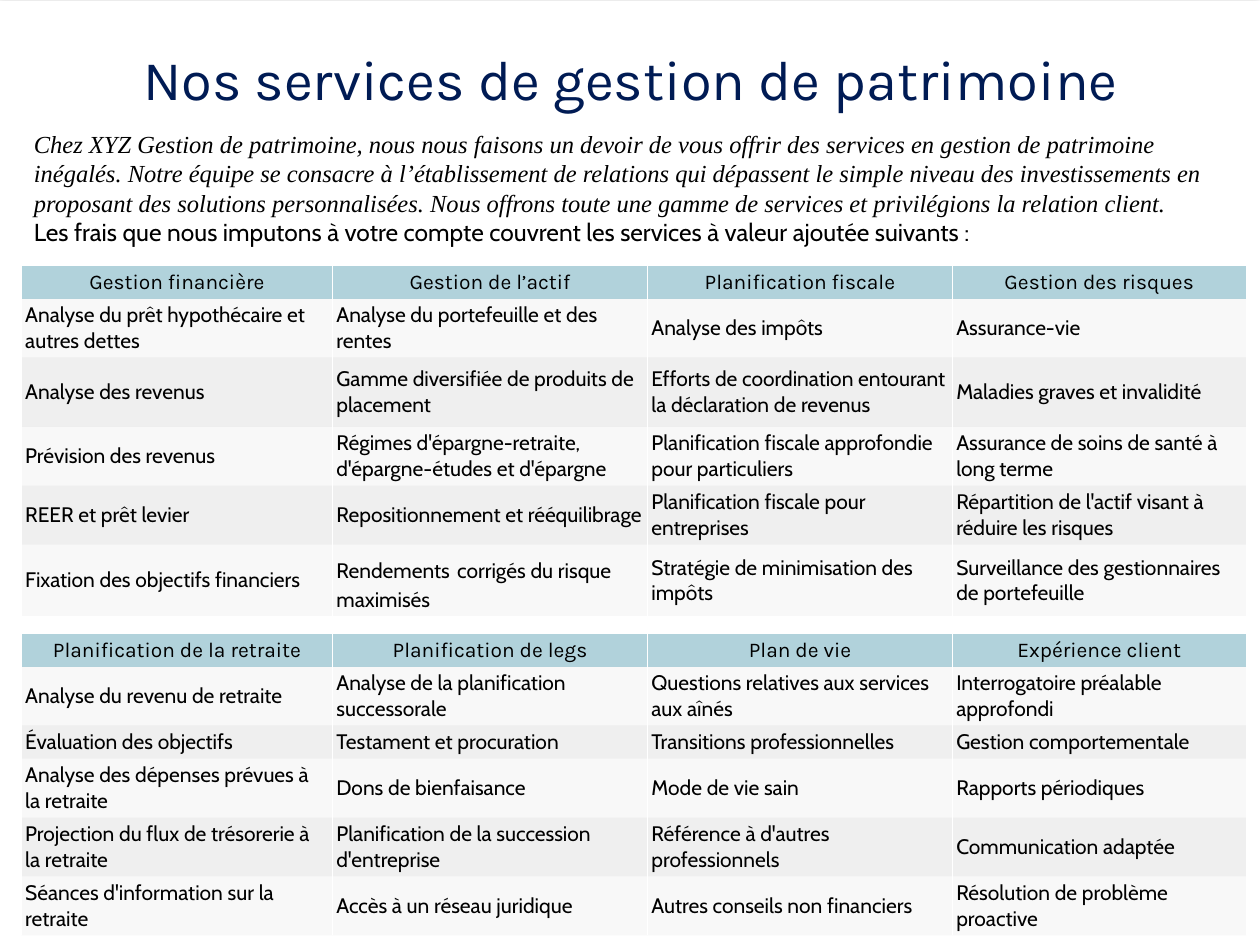
"""Build the wealth-management services slide with its two-part service table."""
from lxml import etree
from pptx import Presentation
from pptx import util as u
from pptx.dml.color import RGBColor
from pptx.enum import shapes, text
from pptx.oxml import ns, parse_xml

COLORS = {"white": "FFFFFF", "black": "000000", "navy": "001B54", "header": "B1D2DB", "band": "C0C0C0"}
NS = ns.nsdecls("a")

prs = Presentation()
prs.slide_width, prs.slide_height = u.Inches(10), u.Inches(7.5)
COL, ROW = prs.slide_width / 100, prs.slide_height / 75
s = prs.slides.add_slide(prs.slide_layouts[6])


def box(left, top, width, height):
    return int(left * COL), int(top * ROW), int(width * COL), int(height * ROW)


def add_run(p, content, font, size, color="black", italic=False):
    r = p.add_run()
    r.text = content
    r.font.name, r.font.size, r.font.italic = font, u.Pt(size), italic
    r.font.color.rgb = RGBColor.from_string(COLORS[color])


sp = s.shapes.add_shape(shapes.MSO_SHAPE.RECTANGLE, *box(0, 0.1, 100, 75.8))
sp.fill.solid()
sp.fill.fore_color.rgb = RGBColor.from_string(COLORS["white"])
sp.line.fill.background()
sp._element.spPr.append(parse_xml(
    f'<a:effectLst {NS}><a:outerShdw blurRad="{u.Pt(3.1)}" dist="{u.Pt(1.8)}" dir="5400000" rotWithShape="0">'
    f'<a:srgbClr val="{COLORS["black"]}"><a:alpha val="35000"/></a:srgbClr></a:outerShdw></a:effectLst>'))

SECTIONS = [
    [
        ["Gestion financière", "Gestion de l’actif", "Planification fiscale", "Gestion des risques"],
        ["Analyse du prêt hypothécaire et autres dettes", "Analyse du portefeuille et des rentes",
         "Analyse des impôts", "Assurance-vie"],
        ["Analyse des revenus", "Gamme diversifiée de produits de placement",
         "Efforts de coordination entourant la déclaration de revenus", "Maladies graves et invalidité"],
        ["Prévision des revenus", "Régimes d'épargne-retraite, d'épargne-études et d'épargne",
         "Planification fiscale approfondie pour particuliers", "Assurance de soins de santé à long terme"],
        ["REER et prêt levier", "Repositionnement et rééquilibrage",
         "Planification fiscale pour entreprises", "Répartition de l'actif visant à réduire les risques"],
        ["Fixation des objectifs financiers", "Rendements| |corrigés du risque maximisés",
         "Stratégie de minimisation des impôts", "Surveillance des gestionnaires de portefeuille"],
    ],
    [
        ["Planification de la retraite", "Planification de legs", "Plan de vie", "Expérience client"],
        ["Analyse du revenu de retraite", "Analyse de la planification successorale",
         "Questions relatives aux services aux aînés", "Interrogatoire préalable approfondi"],
        ["Évaluation des objectifs", "Testament et procuration",
         "Transitions professionnelles", "Gestion comportementale"],
        ["Analyse des dépenses prévues à la retraite", "Dons de bienfaisance",
         "Mode de vie sain", "Rapports périodiques"],
        ["Projection du flux de trésorerie à la retraite", "Planification de la succession d'entreprise",
         "Référence à d'autres professionnels", "Communication adaptée"],
        ["Séances d'information sur la retraite", "Accès à un réseau juridique",
         "Autres conseils non financiers", "Résolution de problème proactive"],
    ],
]
GAP = [[""] * 4]
rows = SECTIONS[0] + GAP + SECTIONS[1]
kinds = ["header", "light", "dark", "light", "dark", "light"]
kinds = kinds + ["gap"] + kinds
FILLS = {"header": ("header", 100), "light": ("band", 10), "dark": ("band", 25), "gap": ("white", 100)}
WIDTHS = [24.7, 25, 24.2, 23.3]
HEIGHTS = [2.6, 4.5, 5.5, 4.5, 4.5, 5.5, 1.4, 2.6, 4.5, 2.6, 4.5, 4.5, 4.5]

frame = s.shapes.add_table(len(rows), len(WIDTHS), *box(1.7, 21.1, sum(WIDTHS), sum(HEIGHTS)))
tbl = frame.table
tbl.first_row = tbl.horz_banding = False
tbl._tbl.tblPr.find(ns.qn("a:tableStyleId")).text = "{2D5ABB26-0587-4C30-8999-92F81FD0307C}"
for column, width in zip(tbl.columns, WIDTHS):
    column.width = int(width * COL)
for line, height in zip(tbl.rows, HEIGHTS):
    line.height = int(height * ROW)

for i, (labels, kind) in enumerate(zip(rows, kinds)):
    fill, alpha = FILLS[kind]
    for j, label in enumerate(labels):
        cell = tbl.cell(i, j)
        inset = 0 if kind == "gap" else u.Inches(0.03)
        cell.margin_left = cell.margin_right = cell.margin_top = cell.margin_bottom = inset
        cell.vertical_anchor = text.MSO_ANCHOR.MIDDLE
        cell.fill.solid()
        cell.fill.fore_color.rgb = RGBColor.from_string(COLORS[fill])
        tcPr = cell._tc.get_or_add_tcPr()
        if alpha < 100:
            etree.SubElement(tcPr.find(".//" + ns.qn("a:srgbClr")), ns.qn("a:alpha"), val=str(alpha * 1000))
        for k, side in enumerate(["lnL", "lnR"]):
            tcPr.insert(k, parse_xml(
                f'<a:{side} {NS} w="{u.Pt(0.25)}"><a:solidFill>'
                f'<a:srgbClr val="{COLORS["white"]}"/></a:solidFill></a:{side}>'))
        p = cell.text_frame.paragraphs[0]
        if kind == "gap":
            etree.SubElement(p._p, ns.qn("a:endParaRPr"), sz="600")
            continue
        if kind == "header":
            p.alignment = text.PP_ALIGN.CENTER
        for part in label.split("|"):
            if part == " ":
                add_run(p, part, "Calibri", 18)
            else:
                add_run(p, part, "Karla" if kind == "header" else "Cabin", 12)

INTRO = ("Chez XYZ Gestion de patrimoine, nous nous faisons un devoir de vous offrir des services en gestion de "
         "patrimoine inégalés. Notre équipe se consacre à l’établissement de relations qui dépassent le simple "
         "niveau des investissements en proposant des solutions personnalisées. Nous offrons toute une gamme de "
         "services et privilégions la relation client.")
FEES = "Les frais que nous imputons à votre compte couvrent les services à valeur ajoutée suivants :"

tf = s.shapes.add_textbox(*box(1.7, 10, 97.5, 9.8)).text_frame
tf.word_wrap, tf.vertical_anchor = True, text.MSO_ANCHOR.MIDDLE
add_run(tf.paragraphs[0], INTRO, "Times New Roman", 14, italic=True)
add_run(tf.add_paragraph(), FEES, "Cabin", 14)

tf = s.shapes.add_textbox(*box(0.2, 2.4, 99.8, 7.6)).text_frame
tf.word_wrap, tf.vertical_anchor = True, text.MSO_ANCHOR.MIDDLE
p = tf.paragraphs[0]
p.alignment = text.PP_ALIGN.CENTER
add_run(p, "Nos services de gestion de patrimoine", "Karla", 32, "navy")

prs.save("out.pptx")
